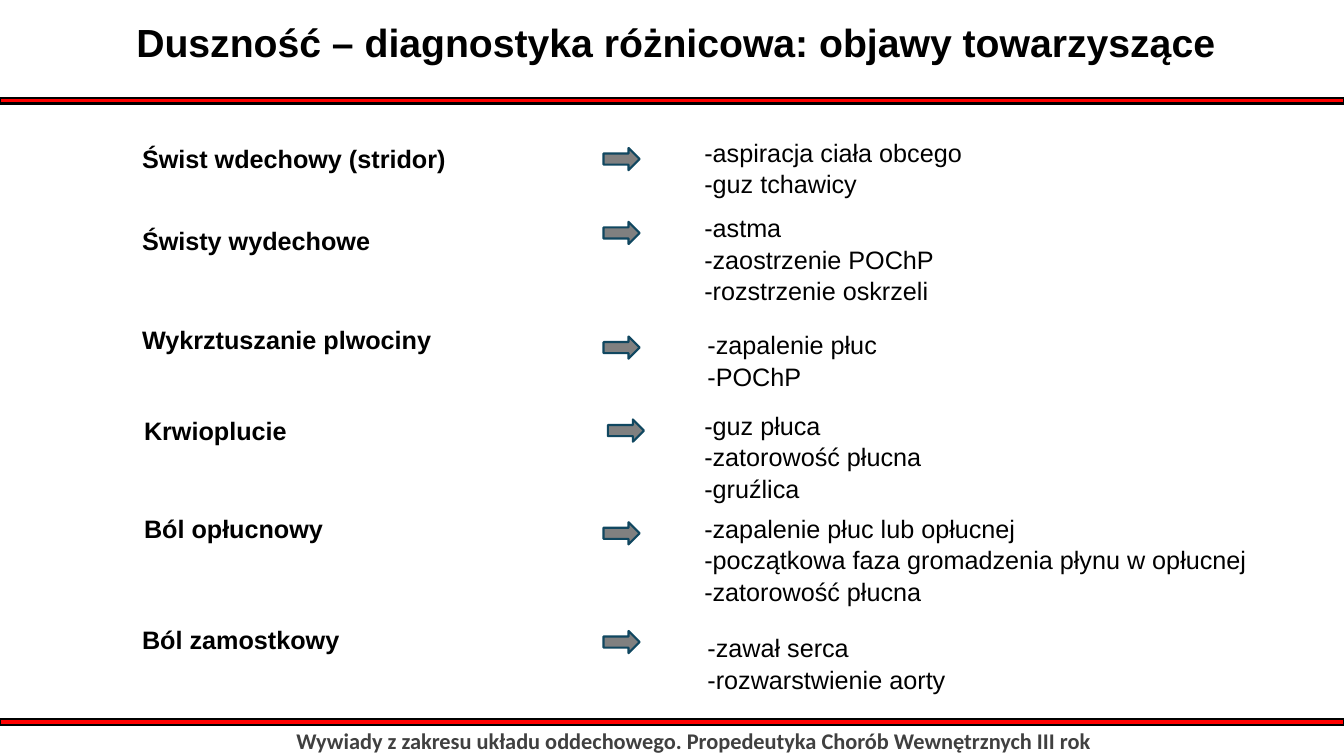
from pptx import Presentation
from pptx.dml.color import RGBColor
from pptx.enum.shapes import MSO_SHAPE
from pptx.enum.text import MSO_ANCHOR, PP_ALIGN
from pptx.util import Cm, Pt

TITLE = "Duszność – diagnostyka różnicowa: objawy towarzyszące"
FOOTER = "Wywiady z zakresu układu oddechowego. Propedeutyka Chorób Wewnętrznych III rok"

# symptom, its (left, top); arrow (left, top); causes, their (left, top), in cm
ROWS = [
    ("Świst wdechowy (stridor)", (3.33, 3.48), (15.21, 3.73),
     ["-aspiracja ciała obcego", "-guz tchawicy"], (17.5, 3.33)),
    ("Świsty wydechowe", (3.33, 5.56), (15.21, 5.59),
     ["-astma", "-zaostrzenie POChP", "-rozstrzenie oskrzeli"], (17.5, 5.23)),
    ("Wykrztuszanie plwociny", (3.33, 8.05), (15.21, 8.48),
     ["-zapalenie płuc", "-POChP"], (17.58, 8.18)),
    ("Krwioplucie", (3.38, 10.34), (15.32, 10.57),
     ["-guz płuca", "-zatorowość płucna", "-gruźlica"], (17.5, 10.21)),
    ("Ból opłucnowy", (3.38, 12.8), (15.21, 13.16),
     ["-zapalenie płuc lub opłucnej",
      "-początkowa faza gromadzenia płynu w opłucnej",
      "-zatorowość płucna"], (17.5, 12.8)),
    ("Ból zamostkowy", (3.33, 15.6), (15.21, 15.9),
     ["-zawał serca", "-rozwarstwienie aorty"], (17.58, 15.82)),
]

COLORS = {"text": "000000", "footer": "404040", "bar": "FF0000",
          "bar_line": "000000", "arrow": "808080", "arrow_line": "104760"}
WIDTH, HEIGHT = 33.87, 19.05
SYMPTOM_W, CAUSES_W = 9.4, 15.5
LINE_H, PADDING = 0.77, 0.25
BAR_TOPS, BAR_H = (2.46, 18.11), 0.15
ARROW_W, ARROW_H = 0.91, 0.56
LEFT, CENTER = PP_ALIGN.LEFT, PP_ALIGN.CENTER
TOP = MSO_ANCHOR.TOP
RECT, ARROW = MSO_SHAPE.RECTANGLE, MSO_SHAPE.RIGHT_ARROW


def write(sp, lines, size=18, font="Arial", color="text", bold=False, align=LEFT):
    tf = sp.text_frame
    tf.word_wrap = True
    tf.vertical_anchor = TOP
    for i, line in enumerate(lines):
        p = tf.add_paragraph() if i else tf.paragraphs[0]
        p.alignment = align
        p.space_after = Pt(1)
        r = p.add_run()
        r.text = line
        r.font.size, r.font.name, r.font.bold = Pt(size), font, bold
        r.font.color.rgb = RGBColor.from_string(COLORS[color])


def add_text(s, lines, left, top, width, **fmt):
    height = len(lines) * LINE_H + PADDING
    sp = s.shapes.add_textbox(Cm(left), Cm(top), Cm(width), Cm(height))
    write(sp, lines, **fmt)


def add_filled(s, kind, left, top, width, height, color):
    sp = s.shapes.add_shape(kind, Cm(left), Cm(top), Cm(width), Cm(height))
    sp.shadow.inherit = False
    sp.fill.solid()
    sp.fill.fore_color.rgb = RGBColor.from_string(COLORS[color])
    sp.line.color.rgb = RGBColor.from_string(COLORS[color + "_line"])
    sp.line.width = Pt(1.5)


def main():
    prs = Presentation()
    prs.slide_width, prs.slide_height = Cm(WIDTH), Cm(HEIGHT)
    s = prs.slides.add_slide(prs.slide_layouts[5])

    title = s.shapes.title
    title.left, title.top, title.width, title.height = Cm(3.18), Cm(0.33), Cm(30.68), Cm(1.45)
    write(title, [TITLE], size=28, bold=True)

    for top in BAR_TOPS:
        add_filled(s, RECT, 0, top, WIDTH, BAR_H, "bar")
    add_text(s, [FOOTER], 6.27, 18.19, 22.43, size=16, font="Calibri",
             color="footer", bold=True, align=CENTER)

    for symptom, symptom_at, arrow_at, causes, causes_at in ROWS:
        add_text(s, [symptom], *symptom_at, SYMPTOM_W, bold=True)
        add_filled(s, ARROW, *arrow_at, ARROW_W, ARROW_H, "arrow")
        add_text(s, causes, *causes_at, CAUSES_W)

    prs.save("out.pptx")


if __name__ == "__main__":
    main()
